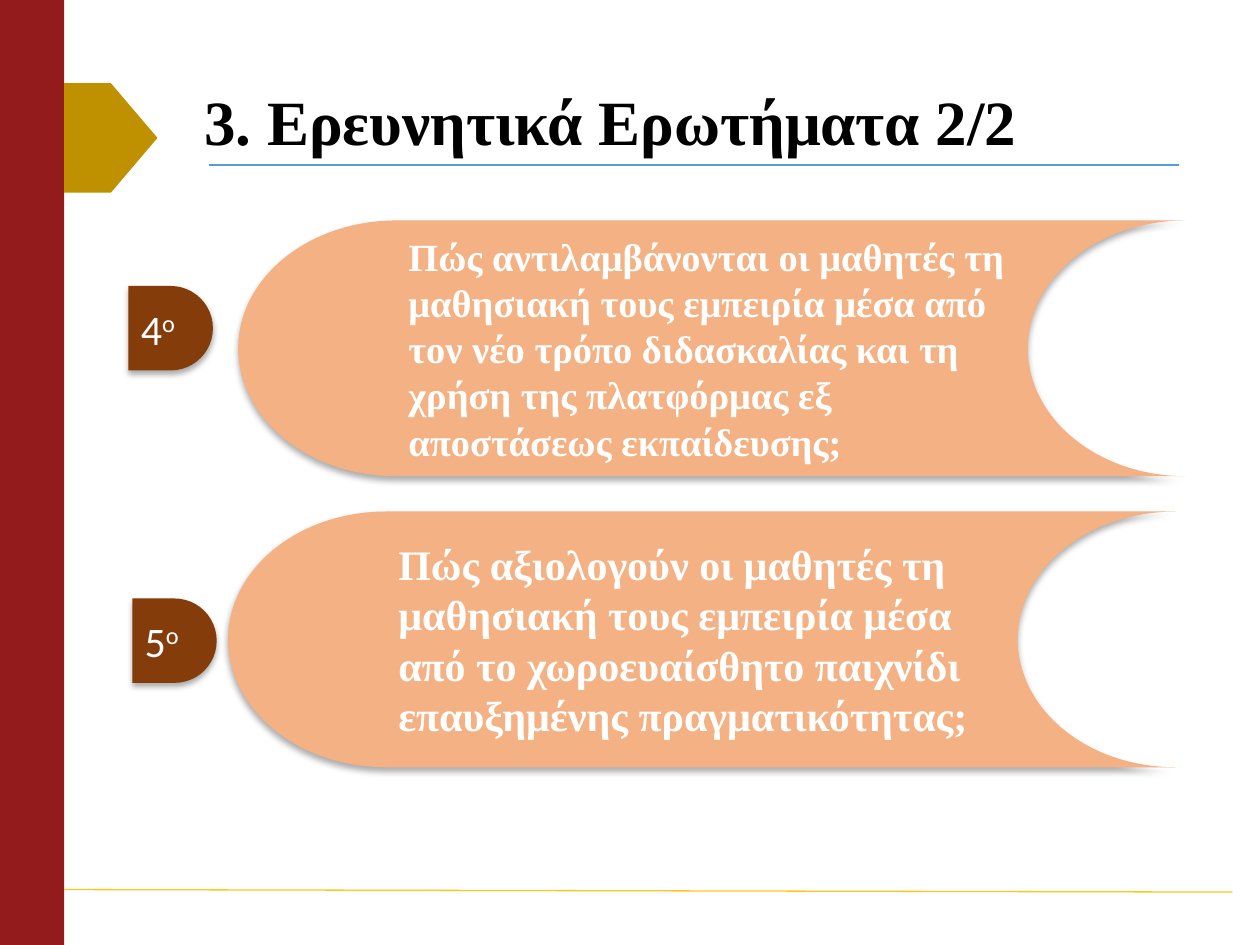
"""Build the slide with the fourth and fifth research questions."""
from dataclasses import dataclass

from lxml import etree
from pptx import Presentation, util as u
from pptx.dml.color import RGBColor
from pptx.enum import shapes, text
from pptx.oxml import ns

RED = RGBColor(0x93, 0x1B, 0x1B)
GOLD = RGBColor(0xBF, 0x90, 0x00)
YELLOW = RGBColor(0xFF, 0xC6, 0x1A)
BLUE = RGBColor(0x5B, 0x9B, 0xD5)
BROWN = RGBColor(0x84, 0x3C, 0x0B)
PEACH = RGBColor(0xF4, 0xB1, 0x83)
WHITE = RGBColor(0xFF, 0xFF, 0xFF)
BLACK = RGBColor(0, 0, 0)
SERIF = "Times New Roman"
SANS = "Calibri"
KIND = shapes.MSO_SHAPE


@dataclass(frozen=True)
class Box:
    left: float
    top: float
    width: float
    height: float

    def edges(self) -> tuple:
        return tuple(u.Inches(v) for v in (self.left, self.top, self.width, self.height))


@dataclass(frozen=True)
class Query:
    mark: str
    badge: Box
    panel: Box
    words: str
    size: int


QUERIES = (
    Query("4", Box(1.02, 2.27, 0.67, 0.67), Box(1.89, 1.75, 7.52, 2.03),
          "Πώς αντιλαμβάνονται οι μαθητές τη μαθησιακή τους εμπειρία μέσα από "
          "τον νέο τρόπο διδασκαλίας και τη χρήση της πλατφόρμας εξ "
          "αποστάσεως εκπαίδευσης;", 22),
    Query("5", Box(1.05, 4.75, 0.67, 0.67), Box(1.81, 4.06, 7.52, 2.03),
          "Πώς αξιολογούν οι μαθητές τη μαθησιακή τους εμπειρία μέσα από το "
          "χωροευαίσθητο παιχνίδι επαυξημένης πραγματικότητας;", 24),
)


def add_form(slide, kind, box: Box, fill: RGBColor):
    form = slide.shapes.add_shape(kind, *box.edges())
    form.shadow.inherit = False
    form.fill.solid()
    form.fill.fore_color.rgb = fill
    form.line.fill.background()
    return form


def add_shade(form) -> None:
    effects = form._element.spPr.find(ns.qn("a:effectLst"))
    shade = etree.SubElement(effects, ns.qn("a:outerShdw"), blurRad=str(u.Pt(3.5)),
                             dist=str(u.Pt(2.2)), dir="5400000", rotWithShape="0")
    tint = etree.SubElement(shade, ns.qn("a:srgbClr"), val=str(BLACK))
    etree.SubElement(tint, ns.qn("a:alpha"), val="32000")


def add_line(slide, start: tuple, end: tuple, color: RGBColor) -> None:
    line = slide.shapes.add_connector(
        shapes.MSO_CONNECTOR.STRAIGHT, *(u.Inches(v) for v in start + end))
    line.line.color.rgb = color
    line.line.width = u.Pt(0.75)
    etree.SubElement(line._element.spPr, ns.qn("a:effectLst"))


def set_up(form):
    frame = form.text_frame
    frame.word_wrap = True
    frame.vertical_anchor = text.MSO_ANCHOR.MIDDLE
    para = frame.paragraphs[0]
    para.alignment = text.PP_ALIGN.LEFT
    return para


def add_run(para, words: str, face: str, size: int, color: RGBColor, bold: bool = False):
    run = para.add_run()
    run.text = words
    run.font.name = face
    run.font.size = u.Pt(size)
    run.font.bold = bold
    run.font.color.rgb = color
    return run


def add_query(slide, query: Query) -> None:
    badge = add_form(slide, KIND.FLOWCHART_DELAY, query.badge, BROWN)
    add_shade(badge)
    para = set_up(badge)
    add_run(para, query.mark, SANS, 24, WHITE)
    suffix = add_run(para, "ο", SANS, 24, WHITE)
    suffix.font._element.set("baseline", "30000")
    panel = add_form(slide, KIND.FLOWCHART_STORED_DATA, query.panel, PEACH)
    add_shade(panel)
    add_run(set_up(panel), query.words, SERIF, query.size, WHITE, True)


def add_title(slide) -> None:
    title = slide.shapes.add_textbox(*Box(1.14, 0.68, 8.5, 0.63).edges())
    para = set_up(title)
    title.text_frame.margin_left = u.Inches(0.48)
    para.line_spacing = 0.9
    add_run(para, "3. Ερευνητικά Ερωτήματα 2/2", SERIF, 36, BLACK, True)


def main() -> None:
    deck = Presentation()
    deck.slide_width, deck.slide_height = u.Inches(10), u.Inches(7.5)
    slide = deck.slides.add_slide(deck.slide_layouts[6])
    add_form(slide, KIND.RECTANGLE, Box(0, 0, 0.51, 7.5), RED)
    add_line(slide, (1.66, 1.31), (9.36, 1.31), BLUE)
    add_line(slide, (0.51, 7.06), (9.78, 7.08), YELLOW)
    add_form(slide, KIND.PENTAGON, Box(0.51, 0.66, 0.74, 0.87), GOLD)
    add_title(slide)
    for query in QUERIES:
        add_query(slide, query)
    deck.save("out.pptx")


if __name__ == "__main__":
    main()
